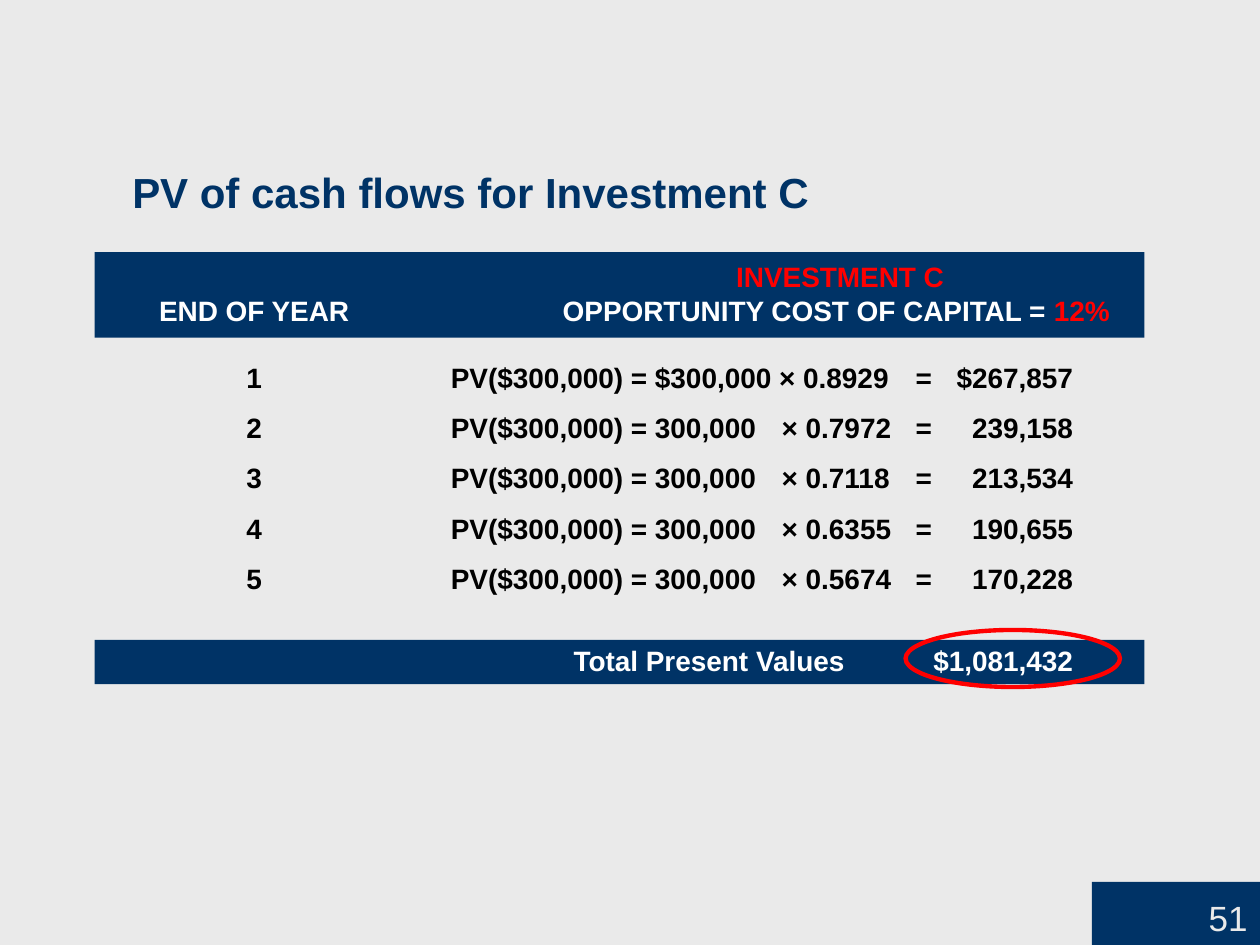
from dataclasses import dataclass

from lxml.etree import SubElement
from pptx import Presentation
from pptx.dml.color import RGBColor as Color
from pptx.enum.shapes import MSO_SHAPE as Shape
from pptx.enum.text import MSO_ANCHOR as Anchor, PP_ALIGN as Align
from pptx.oxml.ns import qn
from pptx.util import Pt


@dataclass(frozen=True)
class Theme:
    font: str = "Arial"
    navy: str = "003366"
    paper: str = "EAEAEA"
    red: str = "FF0000"
    white: str = "FFFFFF"
    black: str = "000000"
    title_size: float = 24
    number_size: float = 20
    body_size: float = 16
    single_line: float = 19.2
    wide_line: float = 28.7


class SlideBuilder:
    def __init__(self, page, theme):
        self.page = page
        self.theme = theme

    def background(self):
        fill = self.page.background.fill
        fill.solid()
        fill.fore_color.rgb = Color.from_string(self.theme.paper)

    def bar(self, left, top, width, height):
        bar = self.page.shapes.add_shape(
            Shape.RECTANGLE, Pt(left), Pt(top), Pt(width), Pt(height))
        bar.shadow.inherit = False
        bar.fill.solid()
        bar.fill.fore_color.rgb = Color.from_string(self.theme.navy)
        bar.line.fill.background()
        return bar

    def ring(self, left, top, width, height):
        ring = self.page.shapes.add_shape(
            Shape.OVAL, Pt(left), Pt(top), Pt(width), Pt(height))
        ring.shadow.inherit = False
        ring.fill.background()
        ring.line.color.rgb = Color.from_string(self.theme.red)
        ring.line.width = Pt(2.5)

    def text_box(self, left, top, width, height, anchor=Anchor.TOP):
        box = self.page.shapes.add_textbox(
            Pt(left), Pt(top), Pt(width), Pt(height))
        box.text_frame.word_wrap = True
        box.text_frame.vertical_anchor = anchor
        return box

    def span(self, para, text, size, color, bold=True):
        span = para.add_run()
        span.text = text
        span.font.name = self.theme.font
        span.font.size = Pt(size)
        span.font.bold = bold
        span.font.color.rgb = Color.from_string(color)

    def tabbed_lines(self, box, lines, tabs, spacing):
        """Each line is a list of (text, color); each tab is (points, alignment)."""
        frame = box.text_frame
        for index, line in enumerate(lines):
            para = frame.add_paragraph() if index else frame.paragraphs[0]
            para.alignment = Align.LEFT
            para.line_spacing = Pt(spacing)
            # A pPr element already exists once alignment is set
            tab_list = SubElement(para._p.pPr, qn("a:tabLst"))
            for position, alignment in tabs:
                SubElement(tab_list, qn("a:tab"), pos=str(Pt(position)), algn=alignment)
            for text, color in line:
                self.span(para, text, self.theme.body_size, color)


def main():
    theme = Theme()
    deck = Presentation()
    deck.slide_width, deck.slide_height = Pt(720), Pt(540)
    builder = SlideBuilder(deck.slides.add_slide(deck.slide_layouts[6]), theme)
    builder.background()

    # Page number
    number = builder.bar(624, 504, 96, 36).text_frame
    number.vertical_anchor = Anchor.BOTTOM
    number.paragraphs[0].alignment = Align.RIGHT
    builder.span(number.paragraphs[0], "51", theme.number_size, theme.paper, bold=False)

    # Title
    title = builder.text_box(68.5, 53.3, 643, 74.2, Anchor.BOTTOM)
    builder.span(title.text_frame.paragraphs[0], "PV of cash flows for Investment C",
                 theme.title_size, theme.navy)

    # Column headings
    builder.bar(54, 144, 600, 49)
    headings = builder.text_box(30.2, 144.7, 666, 46)
    builder.tabbed_lines(headings, [
        [("\t\t ", theme.white), ("INVESTMENT C", theme.red)],
        [("\tEND OF YEAR\tOPPORTUNITY COST OF CAPITAL = ", theme.white),
         ("12%", theme.red)],
    ], [(108, "ctr"), (440.6, "ctr")], theme.single_line)

    # Present value of each year's cash flow
    cash_flows = [
        ("$300,000 × 0.8929", "$267,857"),
        ("300,000\t× 0.7972", "239,158"),
        ("300,000\t× 0.7118", "213,534"),
        ("300,000\t× 0.6355", "190,655"),
        ("300,000\t× 0.5674", "170,228"),
    ]
    rows = builder.text_box(16.6, 193, 679, 152)
    builder.tabbed_lines(rows, [
        [(f"\t{year}\tPV($300,000) = {product}\t=\t{value}", theme.black)]
        for year, (product, value) in enumerate(cash_flows, start=1)
    ], [(121.5, "ctr"), (234, "l"), (423, "l"), (499.5, "l"), (589.5, "r")],
        theme.wide_line)

    # Total
    builder.bar(54, 365.7, 600, 25.2)
    total = builder.text_box(16.6, 364.3, 655, 26.6)
    builder.tabbed_lines(total, [[("\tTotal Present Values\t$1,081,432", theme.white)]],
                         [(459, "r"), (589.5, "r")], theme.single_line)
    builder.ring(517.5, 360, 122.5, 32.6)

    deck.save("out.pptx")


if __name__ == "__main__":
    main()
